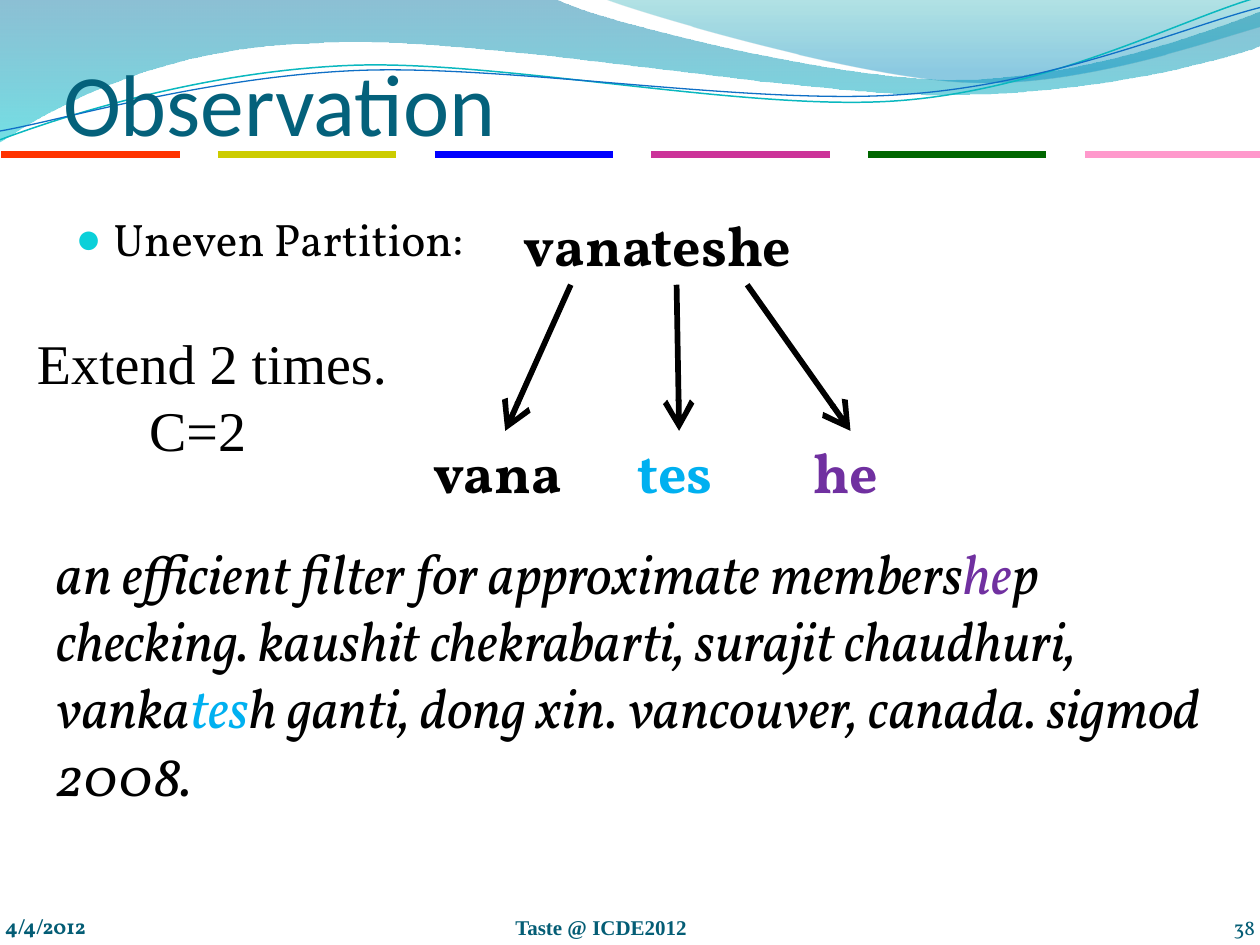
"""Build the "Observation" slide on a grid of 100 columns by 75 rows."""
from dataclasses import dataclass

from lxml import etree
from pptx import Presentation
from pptx.dml.color import RGBColor
from pptx.enum.shapes import MSO_CONNECTOR
from pptx.enum.text import MSO_ANCHOR, MSO_AUTO_SIZE, PP_ALIGN
from pptx.oxml.ns import qn
from pptx.util import Inches, Pt

STRAIGHT = MSO_CONNECTOR.STRAIGHT
TOP, BOTTOM = MSO_ANCHOR.TOP, MSO_ANCHOR.BOTTOM
NO_FIT = MSO_AUTO_SIZE.NONE
LEFT, RIGHT = PP_ALIGN.LEFT, PP_ALIGN.RIGHT
COLUMNS, ROWS = 100, 75


@dataclass(frozen=True)
class Theme:
    """Colours, fonts and type sizes of the slide."""

    text: str = "000000"
    title: str = "04617B"
    footer: str = "045D75"
    bullet: str = "0BD0D9"
    middle: str = "00B0F0"
    ending: str = "7030A0"
    rules: tuple = ("FF3300", "CCCC00", "0000FF", "CC3399", "006600", "FF99CC")
    wide_wave: tuple = ((0, "0074A1", 45), (1, "00C6CF", 55))
    right_wave: tuple = ((0, "00A1A9", 30), (0.8, "008BBF", 45))
    teal_line: str = "0AB8BF"
    blue_line: str = "0F6FC6"
    serif: str = "Vollkorn"
    sans: str = "Calibri"
    roman: str = "Times New Roman"
    title_size: int = 50
    body_size: int = 26
    large_size: int = 32
    footer_size: int = 12


THEME = Theme()


def grid(*cells):
    """Turn grid cells into lengths."""
    return [Inches(cell / 10) for cell in cells]


def bend(shape, segments):
    """Merge the straight steps of each three-point segment into one curve."""
    steps = iter(shape.element.xpath(".//a:path/a:lnTo"))
    for segment in segments:
        first, *others = [next(steps) for _ in segment]
        if others:
            first.addprevious(curve := etree.Element(qn("a:cubicBezTo")))
            for step in (first, *others):
                curve.append(step[0])
                step.getparent().remove(step)


def add_wave(page, start, segments, closed):
    """Add an outline of lines (one point) and curves (three points)."""
    builder = page.shapes.build_freeform(*grid(*start))
    points = [tuple(grid(*point)) for segment in segments for point in segment]
    builder.add_line_segments(points, close=closed)
    wave = builder.convert_to_shape()
    bend(wave, segments)
    wave.shadow.inherit = False
    return wave


def add_filled_wave(page, start, segments, stops):
    """Add a wave with a translucent gradient running downwards."""
    wave = add_wave(page, start, segments, True)
    wave.line.fill.background()
    wave.fill.gradient()
    wave.fill.gradient_angle = 270
    for stop, (position, color, _) in zip(wave.fill.gradient_stops, stops):
        stop.position = position
        stop.color.rgb = RGBColor.from_string(color)
    for node, (_, _, opacity) in zip(wave.element.xpath(".//a:gs/a:srgbClr"), stops):
        etree.SubElement(node, qn("a:alpha"), val=str(opacity * 1000))


def add_line_wave(page, start, segments, color, width):
    """Add a thin open wave."""
    wave = add_wave(page, start, segments, False)
    wave.fill.background()
    wave.line.color.rgb = RGBColor.from_string(color)
    wave.line.width = Pt(width)


def add_line(page, start, end, color, width, arrow=False):
    """Add a straight line, with a large open arrowhead if asked."""
    line = page.shapes.add_connector(STRAIGHT, *grid(*start, *end))
    line.line.color.rgb = RGBColor.from_string(color)
    line.line.width = Pt(width)
    if arrow:
        outline = line.element.spPr.find(qn("a:ln"))
        etree.SubElement(outline, qn("a:tailEnd"), type="arrow", w="lg", len="lg")
    etree.SubElement(line.element.spPr, qn("a:effectLst"))


def add_runs(para, runs, size, font=THEME.serif, bold=False, italic=False):
    """Add (text, colour) runs of one style to a paragraph."""
    for text, color in runs:
        span = para.add_run()
        span.text = text
        span.font.name, span.font.size = font, Pt(size)
        span.font.bold, span.font.italic = bold, italic
        span.font.color.rgb = RGBColor.from_string(color)


def add_text(page, area, paragraphs, size, align=LEFT, wrap=True, **style):
    """Add a text box and return its frame."""
    frame = page.shapes.add_textbox(*grid(*area)).text_frame
    frame.word_wrap = wrap
    for index, runs in enumerate(paragraphs):
        para = frame.add_paragraph() if index else frame.paragraphs[0]
        para.alignment = align
        add_runs(para, runs, size, **style)
    return frame


def add_footer(page, area, text, **style):
    """Add a footer text standing on the bottom of its area."""
    frame = add_text(page, area, [[(text, THEME.footer)]], THEME.footer_size, **style)
    frame.vertical_anchor = BOTTOM
    frame.margin_left = frame.margin_right = frame.margin_top = frame.margin_bottom = 0


def place(page, holder, area, anchor):
    """Move a placeholder to its area, in front of the backdrop."""
    holder.left, holder.top, holder.width, holder.height = grid(*area)
    page.shapes.element.append(holder.element)
    frame = holder.text_frame
    frame.auto_size, frame.vertical_anchor = NO_FIT, anchor
    para = frame.paragraphs[0]
    para.alignment, para.space_before = LEFT, Pt(0)
    return frame, para


def add_bullet(para, indent, color):
    """Give a paragraph a hanging round bullet."""
    props = para._p.get_or_add_pPr()
    props.set("marL", str(indent))
    props.set("indent", str(-indent))
    paint = etree.SubElement(props, qn("a:buClr"))
    etree.SubElement(paint, qn("a:srgbClr"), val=color)
    etree.SubElement(props, qn("a:buSzPct"), val="95000")
    etree.SubElement(props, qn("a:buChar"), char="●")


def add_backdrop(page):
    """Draw the waves and the row of coloured rules."""
    add_filled_wave(page, (0, 0), [
        [(44, -0.1)], [(47.6, 1.7), (66.4, 6.3), (75.8, 6.3)],
        [(85.3, 6.3), (95.8, 2.6), (100, 0.9)], [(100.1, 3.6)],
        [(98.3, 4.4), (87, 7.6), (74.6, 7.5)], [(62.2, 7.5), (38.2, 2.8), (25.7, 3.4)],
        [(12.9, 3.6), (4.6, 8.3), (-0.1, 11.3)], [(0, 0)]], THEME.wide_wave)
    add_filled_wave(page, (47.9, -0.1), [
        [(50.9, 1.1), (68.2, 6.2), (76.9, 6.5)], [(85.6, 6.9), (96.1, 3.2), (100, 2.1)],
        [(100, 0)], [(47.9, -0.1)]], THEME.right_wave)
    add_line_wave(page, (0, 11.1), [
        [(4.8, 9.3), (15.8, 5.7), (27.7, 5.2)], [(39.5, 4.7), (59.3, 8.9), (71.3, 8)],
        [(83.3, 7.1), (93.8, 1.5), (99.8, -0.2)]], THEME.teal_line, 0.85)
    add_line_wave(page, (0, 10.4), [
        [(4.7, 9.6), (16.4, 6.1), (28.3, 5.6)], [(40.3, 5.1), (59.7, 8.4), (71.7, 7.5)],
        [(83.6, 6.7), (94.1, 2.1), (100, 0.6)]], THEME.blue_line, 0.75)
    for index, color in enumerate(THEME.rules):
        left = 0.1 + 17.2 * index
        add_line(page, (left, 12.3), (left + 14.15, 12.3), color, 4)


def add_partition(page):
    """Draw the word, its three parts and the arrows between them."""
    parts = [("vanateshe", THEME.text, (40.6, 16.2, 26.3, 6.4)),
             ("vana", THEME.text, (33.4, 34.2, 13.4, 6.4)),
             ("tes", THEME.middle, (49.6, 34.2, 8.6, 6.4)),
             ("he", THEME.ending, (63.6, 34.2, 8.7, 6.4))]
    for word, color, area in parts:
        add_text(page, area, [[(word, color)]], THEME.large_size, bold=True)
    for start, end in ((45.3, 40.1), (53.7, 53.9), (59.3, 67.5)):
        add_line(page, (start, 22.6), (end, 34.2), THEME.text, 3.25, arrow=True)


def main():
    """Build and save the deck."""
    deck = Presentation()
    deck.slide_width, deck.slide_height = grid(COLUMNS, ROWS)
    page = deck.slides.add_slide(deck.slide_layouts[1])
    add_backdrop(page)
    frame, para = place(page, page.shapes.title, (5, -0.3, 90, 12.5), BOTTOM)
    frame.margin_left = frame.margin_right = frame.margin_bottom = 0
    add_runs(para, [("Observation", THEME.title)], THEME.title_size, THEME.sans)
    _, para = place(page, page.placeholders[1], (5, 16.25, 90, 48), TOP)
    add_bullet(para, Inches(0.3), THEME.bullet)
    add_runs(para, [("Uneven Partition:", THEME.text)], THEME.body_size)
    add_partition(page)
    add_text(page, (3.52, 42.25, 93.3, 22.6), [
        [("an efficient filter for approximate members", THEME.text),
         ("he", THEME.ending), ("p", THEME.text)],
        [("checking. kaushit chekrabarti, surajit chaudhuri, vanka", THEME.text),
         ("tes", THEME.middle),
         ("h ganti, dong xin. vancouver, canada. sigmod 2008.", THEME.text)],
    ], THEME.large_size, italic=True)
    note = add_text(page, (1.95, 25.55, 30.1, 11.8), [
        [("Extend 2 times.", THEME.text)], [("C=2", THEME.text)],
    ], THEME.large_size, wrap=False, font=THEME.roman)
    note.paragraphs[1]._p.get_or_add_pPr().set("marL", str(Inches(0.89)))
    add_footer(page, (0.4, 70.5, 23.3, 4), "4/4/2012", bold=True)
    add_footer(page, (40.9, 70.6, 36.7, 4), "Taste @ ICDE2012", font=THEME.roman, bold=True)
    add_footer(page, (91.3, 70.6, 8.3, 4), "38", align=RIGHT)
    deck.save("out.pptx")


if __name__ == "__main__":
    main()
